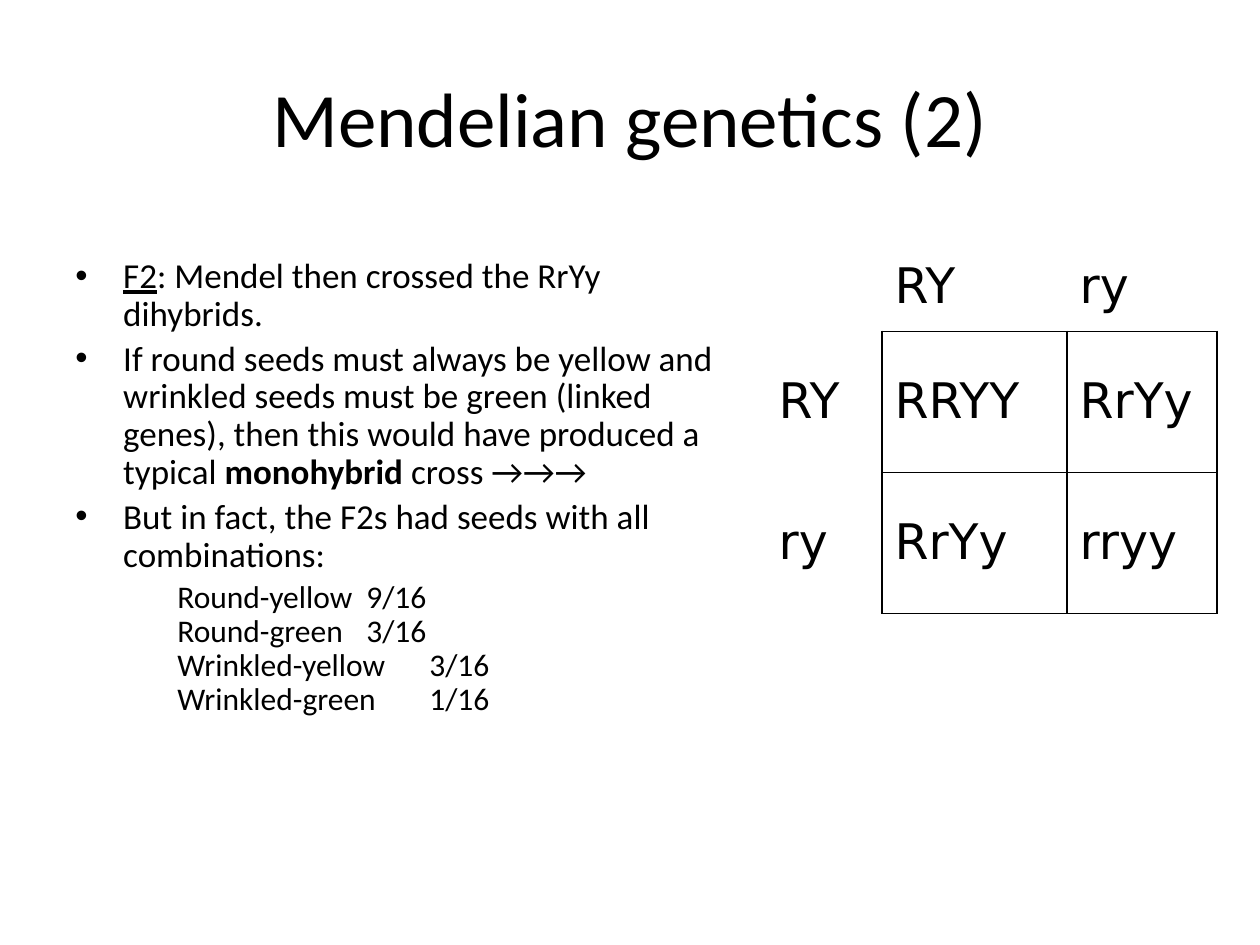
"""Build the Mendelian genetics slide with a dihybrid cross table."""
from lxml.etree import SubElement
from pptx import Presentation
from pptx.dml.color import RGBColor
from pptx.enum.text import MSO_ANCHOR as Anchor, PP_ALIGN as Align
from pptx.oxml import parse_xml
from pptx.oxml.ns import nsdecls, qn
from pptx.util import Inches, Pt

COLORS = {"text": "000000", "border": "000000"}
NO_GRID_STYLE = "{2D5ABB26-0587-4C30-8999-92F81FD0307C}"


def add_span(para, text, size, font="Calibri", bold=False, underline=False):
    span = para.add_run()
    span.text = text
    span.font.size = Pt(size)
    span.font.name = font
    span.font.bold = bold
    span.font.underline = underline
    span.font.color.rgb = RGBColor.from_string(COLORS["text"])


def set_indent(para, left, first):
    props = para._p.get_or_add_pPr()
    props.set("marL", str(Inches(left)))
    props.set("indent", str(Inches(first)))
    para.line_spacing = 0.9
    return props


deck = Presentation()
deck.slide_width, deck.slide_height = Inches(10), Inches(7.5)
page = deck.slides.add_slide(deck.slide_layouts[6])

title = page.shapes.add_textbox(Inches(0.5), Inches(0.3), Inches(9), Inches(1.25)).text_frame
title.word_wrap = True
title.vertical_anchor = Anchor.MIDDLE
title.paragraphs[0].alignment = Align.CENTER
add_span(title.paragraphs[0], "Mendelian genetics (2)", 44)

body = page.shapes.add_textbox(Inches(0.5), Inches(2), Inches(5.33), Inches(5.25)).text_frame
body.word_wrap = True
bullets = [
    [("F2", {"underline": True}), (": Mendel then crossed the RrYy dihybrids.", {})],
    [
        ("If round seeds must always be yellow and wrinkled seeds must be green "
         "(linked genes), then this would have produced a typical ", {}),
        ("monohybrid", {"bold": True}),
        (" cross →→→", {}),
    ],
    [("But in fact, the F2s had seeds with all combinations:", {})],
]
para = body.paragraphs[0]
for bullet in bullets:
    props = set_indent(para, 0.38, -0.38)
    para.space_before = Pt(4)
    SubElement(props, qn("a:buFont"), typeface="Arial")
    SubElement(props, qn("a:buChar"), char="•")
    for text, style in bullet:
        add_span(para, text, 20, **style)
    para = body.add_paragraph()

para.level = 1
set_indent(para, 0.81, -0.31)
para.space_before = Pt(3.6)
ratios = ["\tRound-yellow\t9/16", "Round-green\t3/16", "Wrinkled-yellow\t3/16", "Wrinkled-green\t1/16"]
for index, ratio in enumerate(ratios):
    if index:
        para.add_line_break()
    add_span(para, ratio, 18)

genotypes = [["", "RY", "ry"], ["RY", "RRYY", "RrYy"], ["ry", "RrYy", "rryy"]]
borders = {
    (0, 1): "B", (0, 2): "B",
    (1, 0): "R", (1, 1): "LT", (1, 2): "RT",
    (2, 0): "R", (2, 1): "LB", (2, 2): "RB",
}
frame = page.shapes.add_table(3, 3, Inches(6.08), Inches(1.92), Inches(3.58), Inches(2.95))
cross = frame.table
cross.first_row = cross.horz_banding = False
cross._tbl.tblPr.find(qn("a:tableStyleId")).text = NO_GRID_STYLE
for column, width in zip(cross.columns, [0.92, 1.47, 1.19]):
    column.width = Inches(width)
for row, height in zip(cross.rows, [0.71, 1.12, 1.12]):
    row.height = Inches(height)
for row, names in enumerate(genotypes):
    for column, name in enumerate(names):
        cell = cross.cell(row, column)
        cell.fill.background()
        cell.vertical_anchor = Anchor.MIDDLE
        if name:
            add_span(cell.text_frame.paragraphs[0], name, 28, "DejaVu Sans")
        for place, side in enumerate(borders.get((row, column), "")):
            line = parse_xml(
                f'<a:ln{side} {nsdecls("a")} w="{Pt(1)}"><a:solidFill>'
                f'<a:srgbClr val="{COLORS["border"]}"/></a:solidFill></a:ln{side}>'
            )
            cell._tc.get_or_add_tcPr().insert(place, line)

deck.save("out.pptx")
